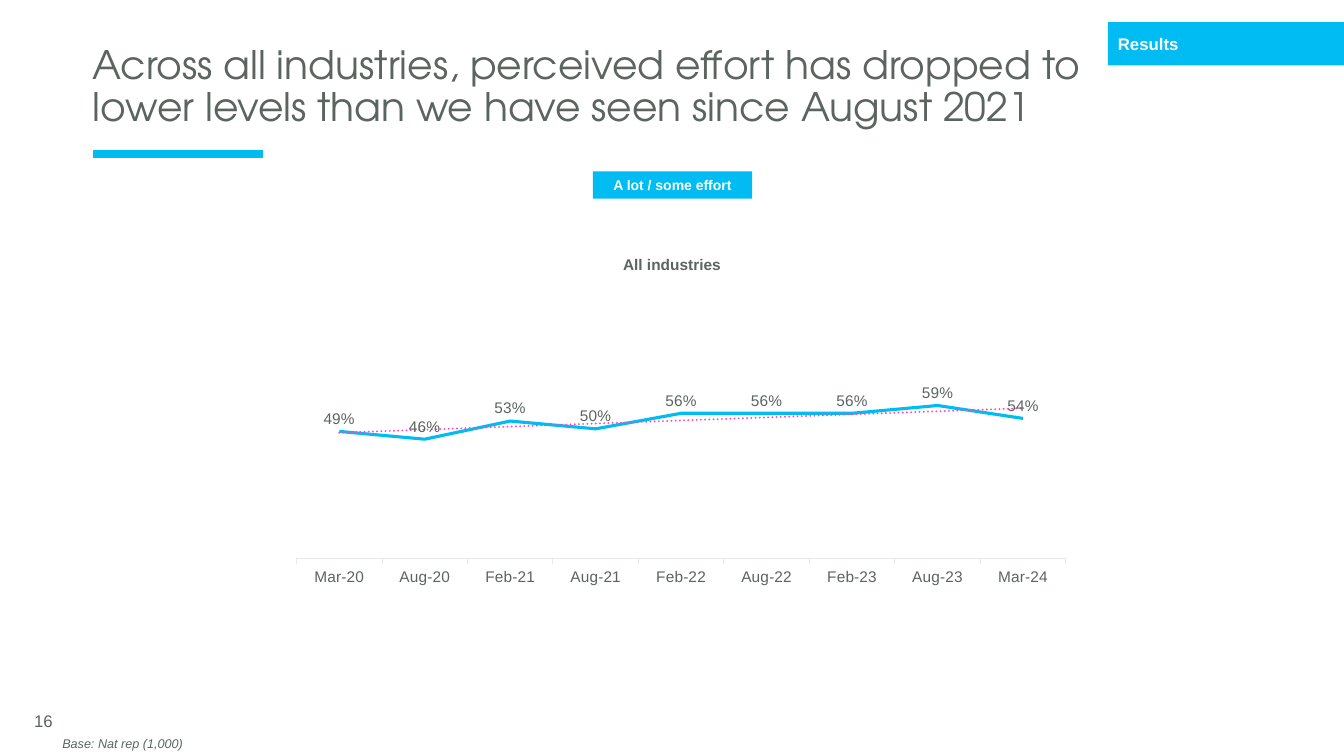
"""Build the perceived-effort trend slide."""
from dataclasses import dataclass

from pptx import Presentation
from pptx.chart.data import CategoryChartData
from pptx.dml.color import RGBColor
from pptx.enum.chart import XL_CHART_TYPE, XL_LABEL_POSITION, XL_TICK_LABEL_POSITION, XL_TICK_MARK
from pptx.enum.shapes import MSO_CONNECTOR, MSO_SHAPE
from pptx.enum.text import MSO_ANCHOR as Anchor, MSO_AUTO_SIZE, PP_ALIGN as Align
from pptx.oxml import parse_xml
from pptx.oxml.ns import nsdecls, qn
from pptx.slide import Slide
from pptx.util import Inches, Pt


@dataclass(frozen=True)
class Theme:
    accent: str = "00BCF2"
    ink: str = "5B645F"
    paper: str = "FFFFFF"
    axis: str = "E6E8E7"
    trend: str = "F84CBC"
    body_font: str = "Arial"
    title_font: str = "TeX Gyre Adventor"
    title: int = 28
    label: int = 12
    chart: int = 11
    tag: int = 10
    note: int = 9


@dataclass(frozen=True)
class Box:
    """Position and size in percent of the slide's width and height."""
    left: float
    top: float
    width: float
    height: float

    def emu(self) -> tuple[int, int, int, int]:
        return across(self.left), down(self.top), across(self.width), down(self.height)


@dataclass(frozen=True)
class Label:
    text: str
    box: Box
    size: int
    color: str
    fill: str | None = None
    bold: bool = False
    italic: bool = False
    align: Align = Align.LEFT
    anchor: Anchor = Anchor.MIDDLE


THEME = Theme()
WIDTH, HEIGHT = Inches(13.33), Inches(7.5)
TITLE = "Across all industries, perceived effort has dropped to lower levels than we have seen since August 2021"
TITLE_BOX = Box(6.9, 5.33, 78.02, 13.73)
CHART_BOX = Box(21.3, 37.6, 58.89, 53.73)
PLOT = {"x": 0.013, "y": 0.037, "w": 0.972, "h": 0.638}
RULE_END, RULE_TOP = 19.58, 20.4
EFFORT = {
    "Mar-20": 0.49, "Aug-20": 0.46, "Feb-21": 0.53, "Aug-21": 0.50, "Feb-22": 0.56,
    "Aug-22": 0.56, "Feb-23": 0.56, "Aug-23": 0.59, "Mar-24": 0.54,
}
LABELS = (
    Label("16", Box(1.8, 92.67, 33.76, 5.33), THEME.label, THEME.ink),
    Label("Results", Box(82.44, 2.93, 17.56, 5.73), THEME.label, THEME.paper, THEME.accent, bold=True),
    Label("A lot / some effort", Box(44.11, 22.67, 11.85, 3.6), THEME.tag, THEME.paper, THEME.accent,
          bold=True, align=Align.CENTER),
    Label("Base: Nat rep (1,000)", Box(3.9, 96.8, 75.39, 3.2), THEME.note, THEME.ink, italic=True),
    Label("All industries", Box(42.76, 33.07, 14.48, 4.53), THEME.chart, THEME.ink, bold=True,
          align=Align.CENTER, anchor=Anchor.TOP),
)


def across(percent: float) -> int:
    return round(WIDTH * percent / 100)


def down(percent: float) -> int:
    return round(HEIGHT * percent / 100)


def style_font(font, size: int, color: str, name: str = THEME.body_font) -> None:
    font.name, font.size = name, Pt(size)
    font.color.rgb = RGBColor.from_string(color)


def add_title(slide: Slide) -> None:
    title = slide.shapes.title
    title.left, title.top, title.width, title.height = TITLE_BOX.emu()
    frame = title.text_frame
    frame.text = TITLE
    frame.word_wrap, frame.auto_size = True, MSO_AUTO_SIZE.NONE
    frame.vertical_anchor = Anchor.TOP
    frame.margin_left = frame.margin_right = 0
    headline = frame.paragraphs[0]
    headline.alignment, headline.line_spacing = Align.LEFT, 0.9
    style_font(headline.runs[0].font, THEME.title, THEME.ink, THEME.title_font)


def add_rule(slide: Slide) -> None:
    rule = slide.shapes.add_connector(
        MSO_CONNECTOR.STRAIGHT, across(TITLE_BOX.left), down(RULE_TOP), across(RULE_END), down(RULE_TOP))
    rule.line.color.rgb = RGBColor.from_string(THEME.accent)
    rule.line.width = Pt(6)
    rule.element.spPr.append(parse_xml(f"<a:effectLst {nsdecls('a')}/>"))


def add_label(slide: Slide, label: Label) -> None:
    if label.fill:
        holder = slide.shapes.add_shape(MSO_SHAPE.RECTANGLE, *label.box.emu())
        holder.shadow.inherit = False
        holder.fill.solid()
        holder.fill.fore_color.rgb = RGBColor.from_string(label.fill)
        holder.line.fill.background()
    else:
        holder = slide.shapes.add_textbox(*label.box.emu())
    frame = holder.text_frame
    frame.text = label.text
    frame.word_wrap, frame.vertical_anchor = True, label.anchor
    paragraph = frame.paragraphs[0]
    paragraph.alignment = label.align
    font = paragraph.runs[0].font
    style_font(font, label.size, label.color)
    font.bold, font.italic = label.bold, label.italic


def add_effort_chart(slide: Slide) -> None:
    data = CategoryChartData(number_format="0%")
    data.categories = list(EFFORT)
    data.add_series("Series 1", list(EFFORT.values()))
    chart = slide.shapes.add_chart(XL_CHART_TYPE.LINE, *CHART_BOX.emu(), data).chart
    chart.has_legend = chart.has_title = False
    style_font(chart.font, THEME.chart, THEME.ink)

    months, share = chart.category_axis, chart.value_axis
    months.major_tick_mark = XL_TICK_MARK.OUTSIDE
    months.tick_label_position = XL_TICK_LABEL_POSITION.LOW
    months.has_major_gridlines = share.has_major_gridlines = False
    months.format.line.color.rgb = RGBColor.from_string(THEME.axis)
    months.format.line.width = Pt(0.75)
    style_font(months.tick_labels.font, THEME.chart, THEME.ink)
    share.minimum_scale, share.maximum_scale, share.visible = 0, 1, False

    chart.plots[0].vary_by_categories = False
    effort = chart.plots[0].series[0]
    effort.smooth = False
    effort.format.line.color.rgb = RGBColor.from_string(THEME.accent)
    effort.format.line.width = Pt(2.25)
    values = effort.data_labels
    values.show_value, values.position = True, XL_LABEL_POSITION.ABOVE
    values.number_format, values.number_format_is_linked = "0%", False
    style_font(values.font, THEME.chart, THEME.ink)

    effort._element.find(qn("c:cat")).addprevious(parse_xml(
        f'<c:trendline {nsdecls("c", "a")}><c:spPr><a:ln w="{Pt(1.5)}" cap="rnd"><a:solidFill>'
        f'<a:srgbClr val="{THEME.trend}"/></a:solidFill><a:prstDash val="sysDot"/></a:ln></c:spPr>'
        '<c:trendlineType val="linear"/><c:dispRSqr val="0"/><c:dispEq val="0"/></c:trendline>'))
    place_plot(chart)


def place_plot(chart) -> None:
    area = chart._chartSpace.find(f".//{qn('c:plotArea')}")
    for layout in area.findall(qn("c:layout")):
        area.remove(layout)
    modes = "".join(f'<c:{side}Mode val="edge"/>' for side in "xy")
    sides = "".join(f'<c:{side} val="{portion}"/>' for side, portion in PLOT.items())
    area.insert(0, parse_xml(
        f'<c:layout {nsdecls("c")}><c:manualLayout><c:layoutTarget val="inner"/>'
        f"{modes}{sides}</c:manualLayout></c:layout>"))


def main() -> None:
    deck = Presentation()
    deck.slide_width, deck.slide_height = WIDTH, HEIGHT
    slide = deck.slides.add_slide(deck.slide_layouts[5])
    add_rule(slide)
    add_title(slide)
    add_effort_chart(slide)
    for label in LABELS:
        add_label(slide, label)
    deck.save("out.pptx")


if __name__ == "__main__":
    main()
